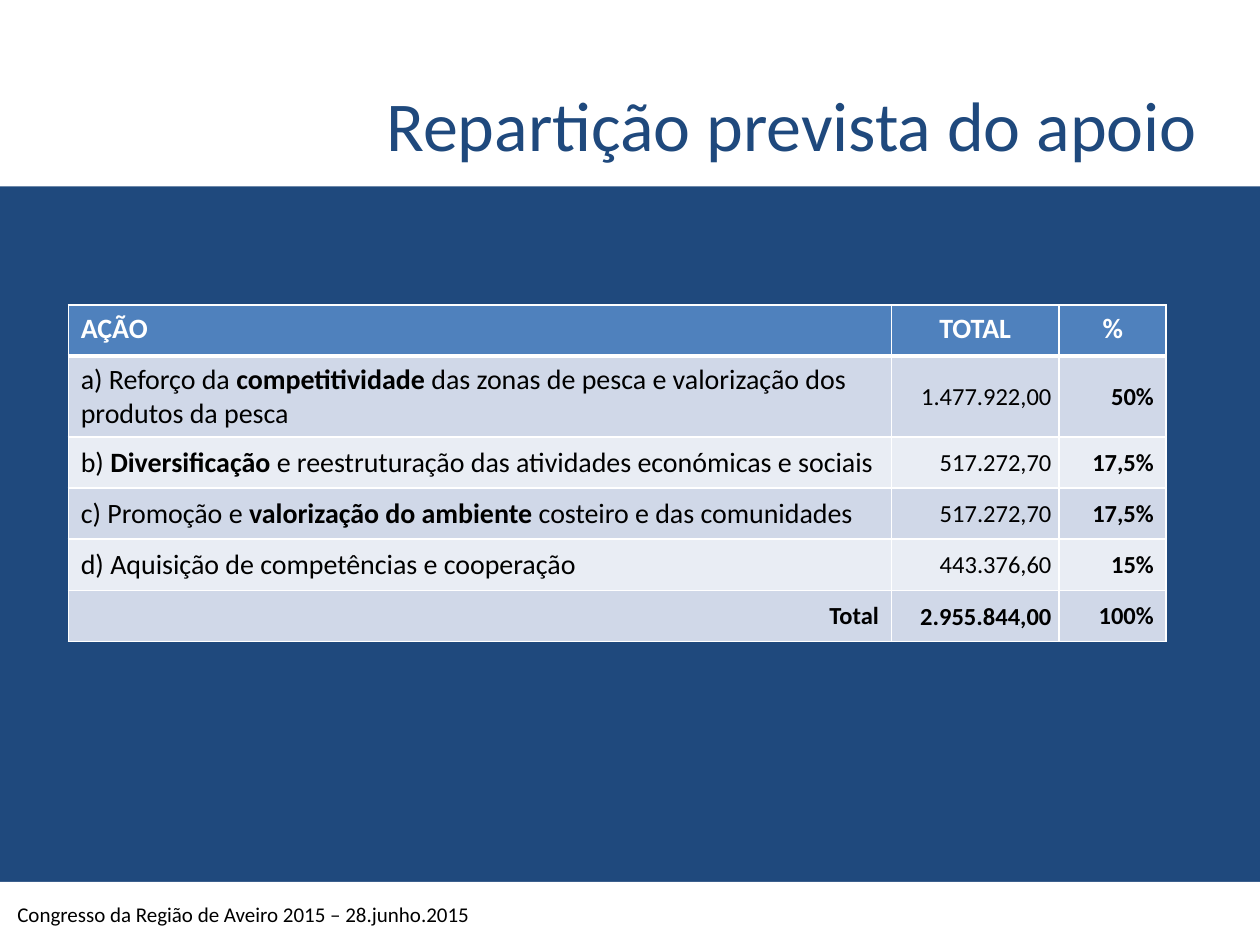
from lxml import etree
from pptx import Presentation
from pptx import util as u
from pptx.dml.color import RGBColor
from pptx.enum import shapes, text
from pptx.oxml.ns import qn

TITLE = "Repartição prevista do apoio"
FOOTER = "Congresso da Região de Aveiro 2015 – 28.junho.2015"
HEADER = ("AÇÃO", "TOTAL", "%")
ACTIONS = [
    (("a) Reforço da ", "competitividade",
      " das zonas de pesca e valorização dos produtos da pesca"), "1.477.922,00", "50%"),
    (("b) ", "Diversificação",
      " e reestruturação das atividades económicas e sociais"), "517.272,70", "17,5%"),
    (("c) Promoção e ", "valorização do ambiente ",
      "costeiro e das comunidades"), "517.272,70", "17,5%"),
    (("d) Aquisição de competências e cooperação",), "443.376,60", "15%"),
]
TOTAL = ("Total", "2.955.844,00", "100%")

THEME = {
    "font": "Calibri", "navy": "1F497D", "white": "FFFFFF", "black": "000000",
    "header": "4F81BD", "bands": ("D0D8E8", "E9EDF4"),
    "title": 40, "action": 16, "value": 14, "footer": 12,
}
WIDTH, HEIGHT = 25.4, 19.05
TOP_BAND, BOTTOM_BAND = 3.76, 1.27
COLS = (16.59, 3.38, 2.16)
ROW, TALL_ROW = 1.03, 1.63
PADDING = (0.25, 0.13, 0.25, 0.13)
VALUE_PADDING = (0.03, 0.03, 0.15, 0)
LEFT, CENTER, RIGHT = text.PP_ALIGN.LEFT, text.PP_ALIGN.CENTER, text.PP_ALIGN.RIGHT
TOP, MIDDLE, BOTTOM = (text.MSO_ANCHOR.TOP, text.MSO_ANCHOR.MIDDLE,
                       text.MSO_ANCHOR.BOTTOM)


def rgb(name):
    return RGBColor.from_string(THEME.get(name, name))


def write(tf, parts, size="action", color="black", bold=False, align=LEFT):
    """Write one paragraph; in a tuple of parts every second one is bold."""
    p = tf.paragraphs[0]
    p.alignment = align
    for i, part in enumerate((parts,) if isinstance(parts, str) else parts):
        r = p.add_run()
        r.text = part
        r.font.name = THEME["font"]
        r.font.size = u.Pt(THEME[size])
        r.font.bold = bold or i % 2 == 1
        r.font.color.rgb = rgb(color)


def set_margins(target, padding):
    sides = ("margin_left", "margin_top", "margin_right", "margin_bottom")
    for side, value in zip(sides, padding):
        setattr(target, side, u.Cm(value))


def add_band(slide, top, height):
    sp = slide.shapes.add_shape(shapes.MSO_SHAPE.RECTANGLE, 0, u.Cm(top),
                                u.Cm(WIDTH), u.Cm(height))
    sp.shadow.inherit = False
    sp.fill.solid()
    sp.fill.fore_color.rgb = rgb("white")
    sp.line.fill.background()


def add_text(slide, box, parts, anchor, padding=PADDING, **fmt):
    tf = slide.shapes.add_textbox(*map(u.Cm, box)).text_frame
    tf.word_wrap = True
    tf.vertical_anchor = anchor
    set_margins(tf, padding)
    write(tf, parts, **fmt)


def style_cell(cell, fill, anchor, padding, bottom=1):
    tc_pr = cell._tc.get_or_add_tcPr()
    for side, width in zip("LRTB", (1, 1, 1, bottom)):
        ln = etree.SubElement(tc_pr, qn(f"a:ln{side}"), w=str(u.Pt(width)))
        solid = etree.SubElement(ln, qn("a:solidFill"))
        etree.SubElement(solid, qn("a:srgbClr"), val=THEME["white"])
    cell.fill.solid()
    cell.fill.fore_color.rgb = rgb(fill)
    cell.vertical_anchor = anchor
    set_margins(cell, padding)


def add_support_table(slide):
    rows = [HEADER, *ACTIONS, TOTAL]
    heights = [TALL_ROW if i == 1 else ROW for i in range(len(rows))]
    table = slide.shapes.add_table(len(rows), len(COLS), u.Cm(1.38), u.Cm(6.15),
                                   u.Cm(sum(COLS)), u.Cm(sum(heights))).table
    for col, width in zip(table.columns, COLS):
        col.width = u.Cm(width)
    for i, (row, height) in enumerate(zip(rows, heights)):
        table.rows[i].height = u.Cm(height)
        for j, parts in enumerate(row):
            cell = table.cell(i, j)
            if row is HEADER:
                style_cell(cell, "header", TOP, PADDING, bottom=3)
                fmt = dict(color="white", bold=True, align=CENTER if j else LEFT)
            else:
                style_cell(cell, THEME["bands"][(i - 1) % 2], MIDDLE,
                           VALUE_PADDING if j == 1 else PADDING)
                is_value = j > 0 or row is TOTAL
                fmt = dict(size="value" if is_value else "action",
                           bold=j == 2 or row is TOTAL,
                           align=RIGHT if is_value else LEFT)
            write(cell.text_frame, parts, **fmt)


def main():
    prs = Presentation()
    prs.slide_width, prs.slide_height = u.Cm(WIDTH), u.Cm(HEIGHT)
    slide = prs.slides.add_slide(prs.slide_layouts[6])
    slide.background.fill.solid()
    slide.background.fill.fore_color.rgb = rgb("navy")
    add_band(slide, HEIGHT - BOTTOM_BAND, BOTTOM_BAND)
    add_band(slide, 0, TOP_BAND)
    add_text(slide, (1.3, 0.15, 22.83, 3.18), TITLE, BOTTOM, (0, 0.13, 0, 0),
             size="title", color="navy", align=RIGHT)
    add_support_table(slide)
    add_text(slide, (0.1, 17.91, 11.1, 1.02), FOOTER, MIDDLE, size="footer")
    prs.save("out.pptx")


if __name__ == "__main__":
    main()
